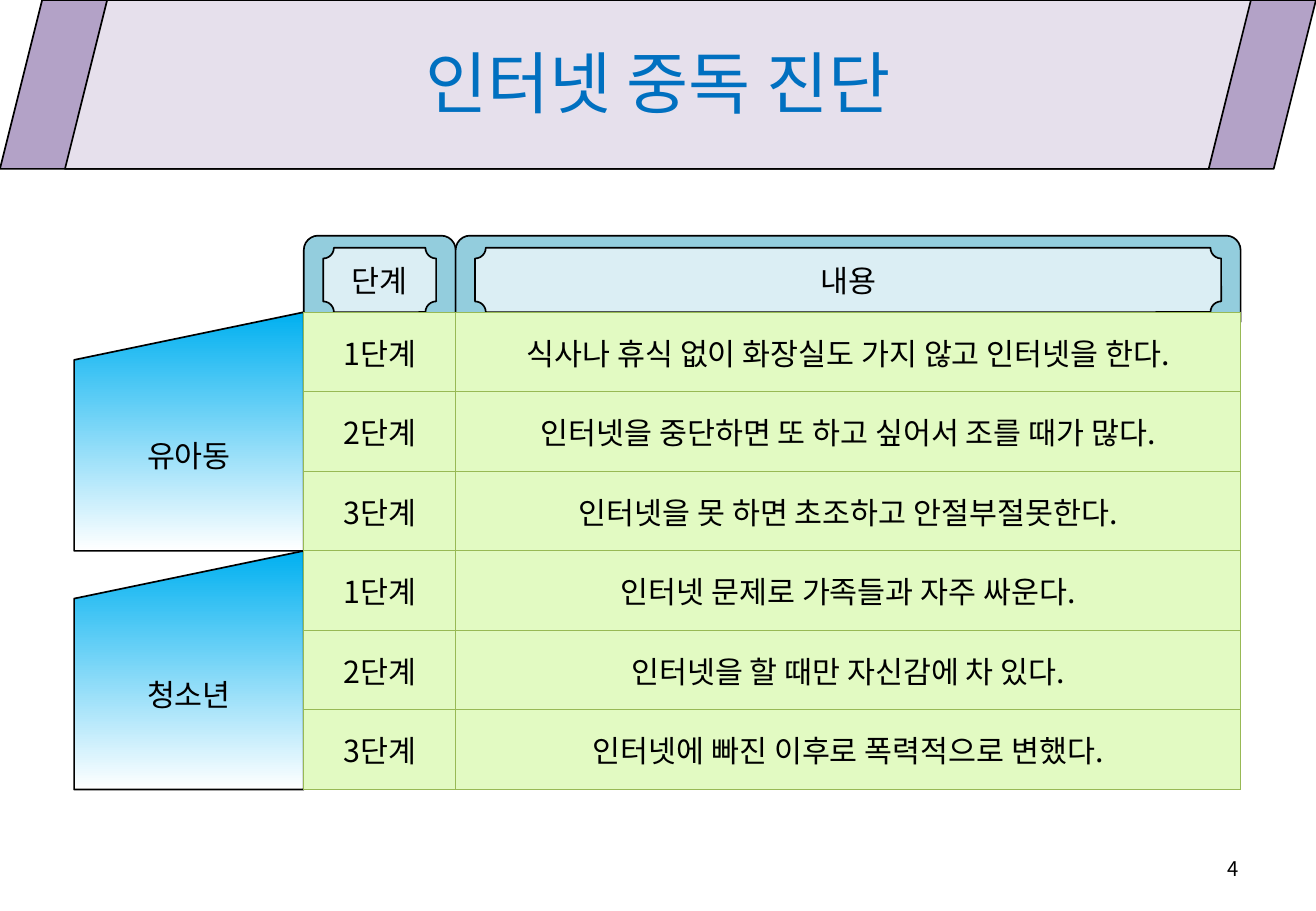
from lxml import etree
from pptx import Presentation
from pptx.dml.color import RGBColor
from pptx.enum.shapes import MSO_SHAPE as SHAPE
from pptx.enum.text import MSO_ANCHOR as ANCHOR, PP_ALIGN as ALIGN
from pptx.oxml import parse_xml
from pptx.oxml.ns import nsdecls, qn
from pptx.util import Inches, Pt

FONT = "Noto Sans CJK KR"
BLACK = RGBColor(0x00, 0x00, 0x00)
WHITE = RGBColor(0xFF, 0xFF, 0xFF)
TITLE_BLUE = RGBColor(0x00, 0x70, 0xC0)
PURPLE = RGBColor(0xB3, 0xA2, 0xC7)
LILAC = RGBColor(0xE6, 0xE0, 0xEC)
TEAL = RGBColor(0x93, 0xCD, 0xDD)
PALE_TEAL = RGBColor(0xDB, 0xEE, 0xF4)
SKY = RGBColor(0x00, 0xB0, 0xF0)
PALE_GREEN = RGBColor(0xE2, 0xFA, 0xC2)
GRID_GREEN = RGBColor(0x98, 0xB9, 0x55)

COLUMNS = [("단계", 1.25), ("내용", 6.46)]
GROUPS = [
    ("유아동", [
        "식사나 휴식 없이 화장실도 가지 않고 인터넷을 한다.",
        "인터넷을 중단하면 또 하고 싶어서 조를 때가 많다.",
        "인터넷을 못 하면 초조하고 안절부절못한다.",
    ]),
    ("청소년", [
        "인터넷 문제로 가족들과 자주 싸운다.",
        "인터넷을 할 때만 자신감에 차 있다.",
        "인터넷에 빠진 이후로 폭력적으로 변했다.",
    ]),
]


def write(tf, text, size=18, color=BLACK, align=ALIGN.CENTER):
    """Fill a text frame with one formatted, vertically centred line."""
    tf.word_wrap = True
    tf.vertical_anchor = ANCHOR.MIDDLE
    p = tf.paragraphs[0]
    p.alignment = align
    r = p.add_run()
    r.text = text
    for name, value in {"name": FONT, "size": Pt(size), "bold": False}.items():
        setattr(r.font, name, value)
    r.font.color.rgb = color
    ea = etree.SubElement(r.font._element, qn("a:ea"))
    ea.set("typeface", FONT)


def add_outlined(slide, kind, box, fill=None):
    """Add a black-outlined preset shape, filled when a colour is given."""
    sp = slide.shapes.add_shape(kind, *map(Inches, box))
    sp.shadow.inherit = False
    sp.line.color.rgb = BLACK
    sp.line.width = Pt(1)
    if fill is not None:
        sp.fill.solid()
        sp.fill.fore_color.rgb = fill
    for side in ("left", "right", "top", "bottom"):
        setattr(sp.text_frame, f"margin_{side}", 0)
    return sp


def add_banner(slide, box, text):
    """Place the title on two nested parallelograms."""
    x, y, w, h = box
    inset = 0.535
    add_outlined(slide, SHAPE.PARALLELOGRAM, box, PURPLE)
    add_outlined(slide, SHAPE.PARALLELOGRAM, (x + inset, y, w - 2 * inset, h), LILAC)
    title = slide.shapes.title
    place = {"left": x + 0.54, "top": y + 0.05, "width": w - 1.08, "height": h - 0.14}
    for name, value in place.items():
        setattr(title, name, Inches(value))
    write(title.text_frame, text, 40, TITLE_BLUE)
    slide.shapes._spTree.append(title._element)


def add_header(slide, box, text):
    """Add one column heading: a rounded cap holding a plaque."""
    x, y, w, h = box
    add_outlined(slide, SHAPE.ROUND_2_SAME_RECTANGLE, box, TEAL)
    plaque = (x + 0.16, y + 0.1, w - 0.32, h - 0.18)
    write(add_outlined(slide, SHAPE.PLAQUE, plaque, PALE_TEAL).text_frame, text)


def add_group_label(slide, box, text):
    """Add an age-group label with a vertical gradient."""
    sp = add_outlined(slide, SHAPE.FLOWCHART_MANUAL_INPUT, box)
    sp.fill.gradient()
    sp.fill.gradient_angle = 270
    for stop, color, position in zip(sp.fill.gradient_stops, (SKY, WHITE), (0, 1)):
        stop.color.rgb = color
        stop.position = position
    write(sp.text_frame, text)


def style_cell(cell):
    """Give a table cell its border and fill."""
    tcPr = cell._tc.get_or_add_tcPr()
    for side in ("lnL", "lnR", "lnT", "lnB"):
        tcPr.append(parse_xml(
            f'<a:{side} {nsdecls("a")} w="{Pt(0.75)}"><a:solidFill>'
            f'<a:srgbClr val="{GRID_GREEN}"/></a:solidFill></a:{side}>'))
    cell.fill.solid()
    cell.fill.fore_color.rgb = PALE_GREEN


def add_stage_table(slide, box):
    """Add the table of stages and symptoms."""
    rows = [(f"{n}단계", text) for _, texts in GROUPS for n, text in enumerate(texts, 1)]
    table = slide.shapes.add_table(len(rows), len(COLUMNS), *map(Inches, box)).table
    table.first_row = table.horz_banding = False
    for column, (_, width) in zip(table.columns, COLUMNS):
        column.width = Inches(width)
    for i, row in enumerate(rows):
        for j, text in enumerate(row):
            cell = table.cell(i, j)
            style_cell(cell)
            write(cell.text_frame, text)
            cell.vertical_anchor = ANCHOR.MIDDLE


def add_diagnosis(slide, box):
    """Lay out headings, group labels and table in the box."""
    x, y, w, h = box
    label_w, header_h = 1.89, 0.63
    table_x, table_y = x + label_w, y + header_h
    left = table_x
    for text, width in COLUMNS:
        add_header(slide, (left, y, width, header_h + 0.08), text)
        left += width
    group_h = (h - header_h) / len(GROUPS)
    for i, (text, _) in enumerate(GROUPS):
        add_group_label(slide, (x, table_y + i * group_h, label_w, group_h), text)
    add_stage_table(slide, (table_x, table_y, w - label_w, h - header_h))


def add_page_number(slide, box, text):
    """Add the right-aligned page number."""
    tf = slide.shapes.add_textbox(*map(Inches, box)).text_frame
    write(tf, text, 12, align=ALIGN.RIGHT)


def main():
    """Build and save the slide."""
    prs = Presentation()
    prs.slide_width, prs.slide_height = Inches(10.83), Inches(7.5)
    slide = prs.slides.add_slide(prs.slide_layouts[5])
    add_banner(slide, (0, 0, 10.83, 1.39), "인터넷 중독 진단")
    add_page_number(slide, (7.76, 6.95, 2.53, 0.4), "4")
    add_diagnosis(slide, (0.61, 1.94, 9.6, 4.56))
    prs.save("out.pptx")


if __name__ == "__main__":
    main()
